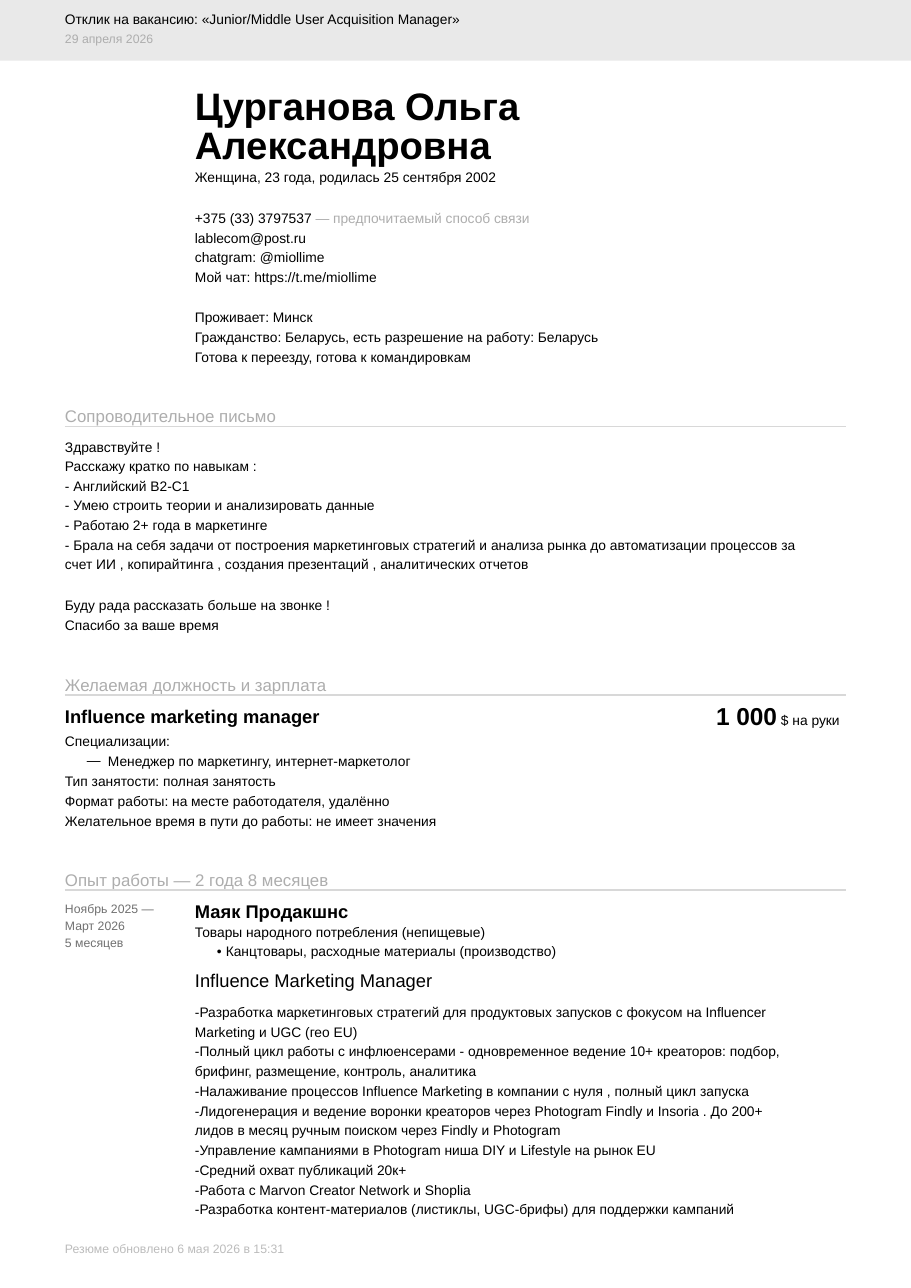
from lxml import etree
from pptx import Presentation
from pptx.dml.color import RGBColor
from pptx.enum.shapes import MSO_CONNECTOR, MSO_SHAPE
from pptx.oxml.ns import qn
from pptx.util import Inches, Pt

COLORS = {
    "text": "000000",
    "muted": "ADADAD",
    "dates": "707070",
    "footer": "BCBCBC",
    "rule": "D8D8D8",
    "band": "E9E9E9",
}
LEFT, COLUMN, RIGHT = 0.59, 1.77, 7.68


def add_text(left, top, width, height, lines, size=9, color="text", bold=False, spacing=13):
    box = slide.shapes.add_textbox(Inches(left), Inches(top), Inches(width), Inches(height))
    frame = box.text_frame
    frame.word_wrap = True
    frame.margin_left = frame.margin_right = frame.margin_top = frame.margin_bottom = 0
    frame.text = "\n".join(lines)
    for paragraph in frame.paragraphs:
        paragraph.line_spacing = Pt(spacing)
        for run in paragraph.runs:
            run.font.name = "Arial"
            run.font.size = Pt(size)
            run.font.bold = bold
            run.font.color.rgb = RGBColor.from_string(COLORS[color])
    return frame.paragraphs


def add_bullet(paragraph, mark, margin, hanging):
    properties = paragraph._p.get_or_add_pPr()
    properties.set("marL", str(Inches(margin)))
    properties.set("indent", str(-Inches(hanging)))
    etree.SubElement(properties, qn("a:buFont")).set("typeface", "Arial")
    etree.SubElement(properties, qn("a:buChar")).set("char", mark)


presentation = Presentation()
presentation.slide_width = Inches(8.27)
presentation.slide_height = Inches(11.69)
slide = presentation.slides.add_slide(presentation.slide_layouts[6])

band = slide.shapes.add_shape(MSO_SHAPE.RECTANGLE, 0, 0, Inches(8.27), Inches(0.55))
band.shadow.inherit = False
band.fill.solid()
band.fill.fore_color.rgb = RGBColor.from_string(COLORS["band"])
band.line.fill.background()

add_text(LEFT, 0.12, 5, 0.13, ["Отклик на вакансию: «Junior/Middle User Acquisition Manager»"], spacing=9)
add_text(LEFT, 0.31, 3, 0.11, ["29 апреля 2026"], 8, "muted", spacing=8)

add_text(COLUMN, 0.82, 3.26, 0.69, ["Цурганова Ольга Александровна"], 25, bold=True, spacing=25)
add_text(COLUMN, 1.56, 4, 0.13, ["Женщина, 23 года, родилась 25 сентября 2002"], spacing=9)

contacts = add_text(COLUMN, 1.87, 4.5, 0.72, [
    "+375 (33) 3797537",
    "lablecom@post.ru",
    "chatgram: @miollime",
    "Мой чат: https://t.me/miollime",
])
preference = contacts[0].add_run()
preference.text = " — предпочитаемый способ связи"
preference.font.name = "Arial"
preference.font.size = Pt(9)
preference.font.color.rgb = RGBColor.from_string(COLORS["muted"])

add_text(COLUMN, 2.77, 4.5, 0.54, [
    "Проживает: Минск",
    "Гражданство: Беларусь, есть разрешение на работу: Беларусь",
    "Готова к переезду, готова к командировкам",
])

sections = [
    ("Сопроводительное письмо", 3.87),
    ("Желаемая должность и зарплата", 6.31),
    ("Опыт работы — 2 года 8 месяцев", 8.08),
]
for heading, rule_y in sections:
    add_text(LEFT, rule_y - 0.16, 4, 0.15, [heading], 11, "muted", spacing=11)
    rule = slide.shapes.add_connector(
        MSO_CONNECTOR.STRAIGHT, Inches(LEFT), Inches(rule_y), Inches(RIGHT), Inches(rule_y))
    rule.line.color.rgb = RGBColor.from_string(COLORS["rule"])
    rule.line.width = Pt(1)
    etree.SubElement(rule._element.spPr, qn("a:effectLst"))

add_text(LEFT, 3.95, 6.8, 1.25, [
    "Здравствуйте !",
    "Расскажу кратко по навыкам :",
    "- Английский В2-С1",
    "- Умею строить теории и анализировать данные",
    "- Работаю 2+ года в маркетинге",
    "- Брала на себя задачи от построения маркетинговых стратегий и анализа рынка "
    "до автоматизации процессов за счет ИИ , копирайтинга , создания презентаций , "
    "аналитических отчетов",
], spacing=12.8)
add_text(LEFT, 5.39, 4, 0.36, [
    "Буду рада рассказать больше на звонке !",
    "Спасибо за ваше время",
])

add_text(LEFT, 6.43, 4, 0.17, ["Influence marketing manager"], 12, bold=True, spacing=12)
conditions = add_text(LEFT, 6.62, 5, 0.9, [
    "Специализации:",
    "Менеджер по маркетингу, интернет-маркетолог",
    "Тип занятости: полная занятость",
    "Формат работы: на месте работодателя, удалённо",
    "Желательное время в пути до работы: не имеет значения",
])
add_bullet(conditions[1], "—", 0.39, 0.19)

salary = add_text(6.5, 6.41, 1.31, 0.22, ["1 000"], 16, bold=True, spacing=16)
currency = salary[0].add_run()
currency.text = " $ на руки"
currency.font.name = "Arial"
currency.font.size = Pt(9)
currency.font.bold = False
currency.font.color.rgb = RGBColor.from_string(COLORS["text"])

add_text(LEFT, 8.16, 1.1, 0.46, ["Ноябрь 2025 —", "Март 2026", "5 месяцев"], 8, "dates", spacing=11)
add_text(COLUMN, 8.2, 4, 0.17, ["Маяк Продакшнс"], 12, bold=True, spacing=12)
industry = add_text(COLUMN, 8.35, 5, 0.36, [
    "Товары народного потребления (непищевые)",
    "Канцтовары, расходные материалы (производство)",
])
add_bullet(industry[1], "•", 0.28, 0.08)
add_text(COLUMN, 8.83, 4, 0.17, ["Influence Marketing Manager"], 12, spacing=12)

add_text(COLUMN, 9.08, 5.5, 1.97, [
    "-Разработка маркетинговых стратегий для продуктовых запусков с фокусом на "
    "Influencer Marketing и UGC (гео EU)",
    "-Полный цикл работы с инфлюенсерами - одновременное ведение 10+ креаторов: "
    "подбор, брифинг, размещение, контроль, аналитика",
    "-Налаживание процессов Influence Marketing в компании с нуля , полный цикл запуска",
    "-Лидогенерация и ведение воронки креаторов через Photogram Findly и Insoria . "
    "До 200+ лидов в месяц ручным поиском через Findly и Photogram",
    "-Управление кампаниями в Photogram ниша DIY и Lifestyle на рынок EU",
    "-Средний охват публикаций 20к+",
    "-Работа с Marvon Creator Network и Shoplia",
    "-Разработка контент-материалов (листиклы, UGC-брифы) для поддержки кампаний",
], spacing=12.9)

add_text(LEFT, 11.29, 4, 0.11, ["Резюме обновлено 6 мая 2026 в 15:31"], 8, "footer", spacing=8)

presentation.save("out.pptx")
